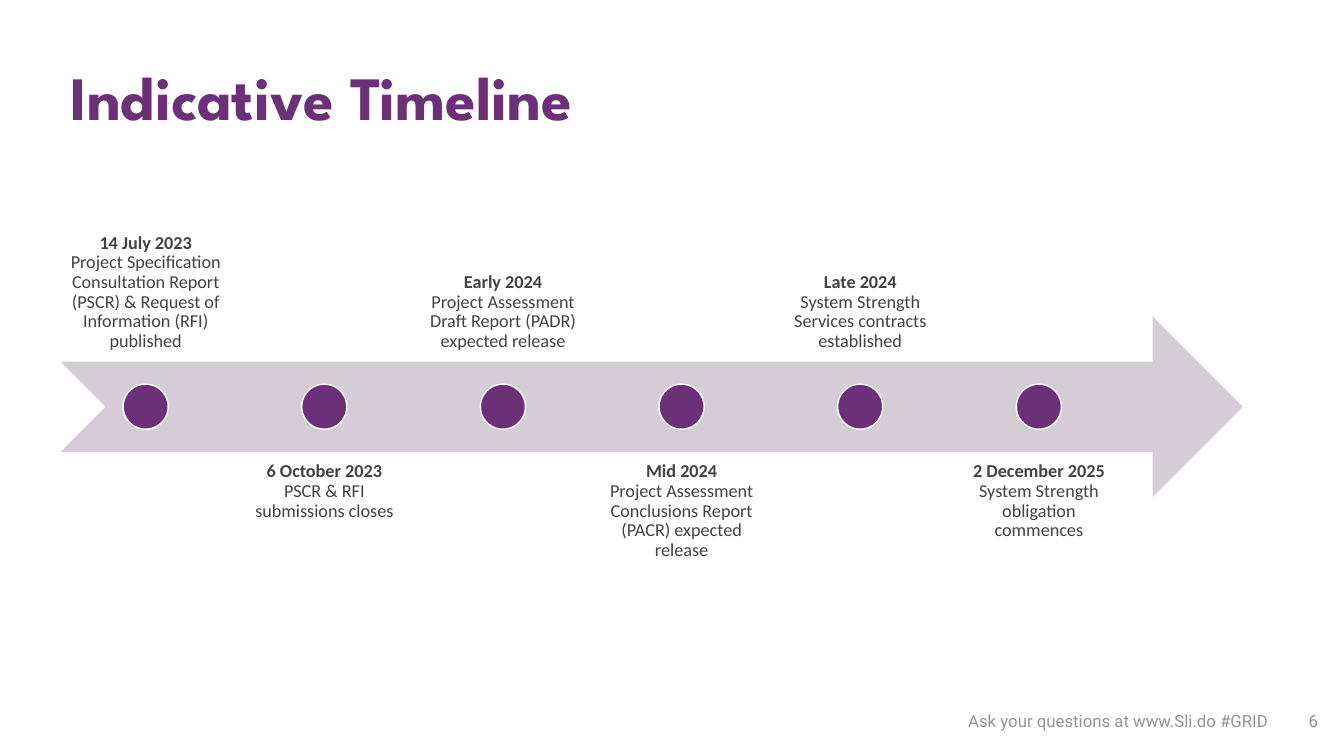
from dataclasses import dataclass

from pptx import Presentation
from pptx.dml.color import RGBColor
from pptx.enum.shapes import MSO_SHAPE as Preset
from pptx.enum.text import MSO_ANCHOR as Anchor, PP_ALIGN as Align
from pptx.util import Pt

TITLE = "Indicative Timeline"
MILESTONES = [
    ("14 July 2023", "Project Specification Consultation Report (PSCR) & Request of Information (RFI) published"),
    ("6 October 2023", "PSCR & RFI submissions closes"),
    ("Early 2024", "Project Assessment Draft Report (PADR) expected release"),
    ("Mid 2024", "Project Assessment Conclusions Report (PACR) expected release"),
    ("Late 2024", "System Strength Services contracts established"),
    ("2 December 2025", "System Strength obligation commences"),
]
QUESTIONS = "Ask your questions at www.Sli.do #GRID"
PAGE_NUMBER = "6"


@dataclass(frozen=True)
class Theme:
    purple: RGBColor = RGBColor.from_string("6B3077")
    arrow: RGBColor = RGBColor.from_string("D4CDD6")
    text: RGBColor = RGBColor.from_string("424242")
    footer: RGBColor = RGBColor.from_string("939393")
    white: RGBColor = RGBColor.from_string("FFFFFF")
    title_font: str = "League Spartan"
    label_font: str = "Calibri"
    footer_font: str = "Roboto"
    title_size: int = 44
    label_size: int = 13
    footer_size: int = 12


theme = Theme()
LEFT = 43.2
ARROW_TOP, ARROW_WIDTH, ARROW_HEIGHT = 226, 844.6, 129
LABEL_WIDTH, LABEL_PITCH, LABEL_INSET = 121.7, 127.6, 7.2
DOT_SIZE = 32.2
FOOTER_TOP, FOOTER_HEIGHT = 500.4, 28.8


def set_font(font, name, size, color):
    font.name = name
    font.size = Pt(size)
    font.color.rgb = color


def add_preset(slide, preset, left, top, width, height, color):
    shape = slide.shapes.add_shape(preset, Pt(left), Pt(top), Pt(width), Pt(height))
    shape.shadow.inherit = False
    shape.fill.solid()
    shape.fill.fore_color.rgb = color
    shape.line.fill.background()
    return shape


def add_text_box(slide, left, top, width, height, anchor, alignment):
    box = slide.shapes.add_textbox(Pt(left), Pt(top), Pt(width), Pt(height))
    frame = box.text_frame
    frame.word_wrap = True
    frame.vertical_anchor = anchor
    frame.paragraphs[0].alignment = alignment
    return frame


def add_title(slide):
    title = slide.shapes.title
    title.left, title.top, title.width, title.height = Pt(LEFT), Pt(44.6), Pt(778.3), Pt(95.8)
    title.text_frame.text = TITLE
    title.text_frame.vertical_anchor = Anchor.TOP
    paragraph = title.text_frame.paragraphs[0]
    paragraph.alignment = Align.LEFT
    paragraph.line_spacing = 0.9
    set_font(paragraph.font, theme.title_font, theme.title_size, theme.purple)
    paragraph.font.bold = True


def add_milestone(slide, index, date, event):
    left = LEFT + index * LABEL_PITCH
    above = index % 2 == 0
    top = ARROW_TOP + ARROW_HEIGHT * (-0.75 if above else 0.75)
    anchor = Anchor.BOTTOM if above else Anchor.TOP
    frame = add_text_box(slide, left, top, LABEL_WIDTH, ARROW_HEIGHT, anchor, Align.CENTER)
    frame.margin_left = frame.margin_right = Pt(LABEL_INSET)
    frame.margin_top = frame.margin_bottom = Pt(LABEL_INSET)
    paragraph = frame.paragraphs[0]
    paragraph.line_spacing = 0.9
    set_font(paragraph.font, theme.label_font, theme.label_size, theme.text)
    date_run = paragraph.add_run()
    date_run.text = date
    date_run.font.bold = True
    paragraph.add_line_break()
    paragraph.add_run().text = event

    dot_left = left + (LABEL_WIDTH - DOT_SIZE) / 2
    dot_top = ARROW_TOP + (ARROW_HEIGHT - DOT_SIZE) / 2
    dot = add_preset(slide, Preset.OVAL, dot_left, dot_top, DOT_SIZE, DOT_SIZE, theme.purple)
    dot.line.color.rgb = theme.white
    dot.line.width = Pt(1)


def add_footer(slide, text, left, width, alignment):
    frame = add_text_box(slide, left, FOOTER_TOP, width, FOOTER_HEIGHT, Anchor.MIDDLE, alignment)
    paragraph = frame.paragraphs[0]
    paragraph.text = text
    set_font(paragraph.font, theme.footer_font, theme.footer_size, theme.footer)


def main():
    presentation = Presentation()
    presentation.slide_width, presentation.slide_height = Pt(960), Pt(540)
    slide = presentation.slides.add_slide(presentation.slide_layouts[5])
    add_title(slide)
    add_preset(slide, Preset.NOTCHED_RIGHT_ARROW, LEFT, ARROW_TOP, ARROW_WIDTH, ARROW_HEIGHT, theme.arrow)
    for index, (date, event) in enumerate(MILESTONES):
        add_milestone(slide, index, date, event)
    add_footer(slide, PAGE_NUMBER, 916.6, 43.2, Align.CENTER)
    add_footer(slide, QUESTIONS, 579.6, 333.4, Align.RIGHT)
    presentation.save("out.pptx")


if __name__ == "__main__":
    main()
